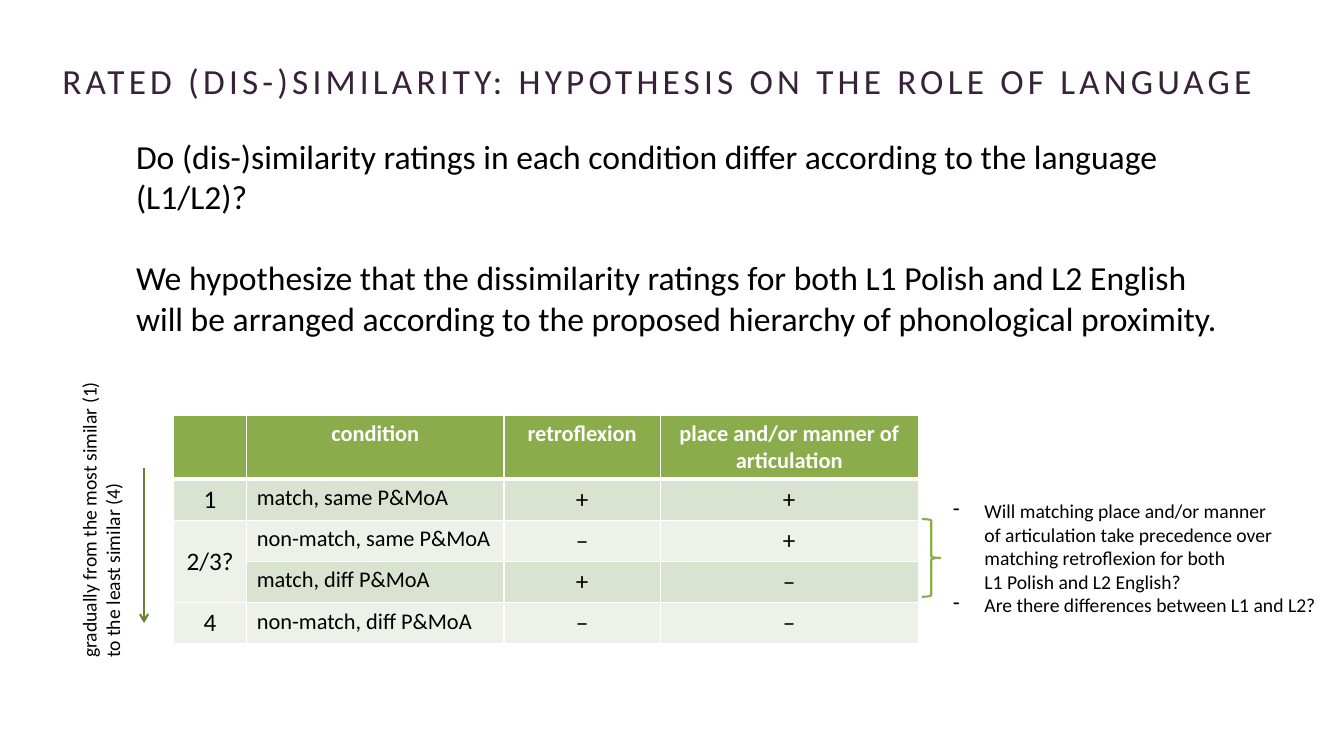
from lxml import etree
from pptx import Presentation
from pptx.dml.color import RGBColor
from pptx.enum import shapes, text
from pptx.oxml import ns
from pptx.util import Cm, Pt

FONT = "Calibri"
GREEN, DARK_GREEN, PURPLE = "8AAC4A", "688138", "39213B"
WHITE, BLACK = "FFFFFF", "000000"
BANDS = ["DAE3D0", "EDF1E9"]
CENTER = text.PP_ALIGN.CENTER

COLUMNS = [1.85, 6.48, 3.94, 6.5]
ROWS = [
    ["", "condition", "retroflexion", "place and/or manner of articulation"],
    ["1", "match, same P&MoA", "+", "+"],
    ["2/3?", "non-match, same P&MoA", "–", "+"],
    ["", "match, diff P&MoA", "+", "–"],
    ["4", "non-match, diff P&MoA", "–", "–"],
]
AIMS = [
    "Do (dis-)similarity ratings in each condition differ according to the language (L1/L2)?",
    "We hypothesize that the dissimilarity ratings for both L1 Polish and L2 English "
    "will be arranged according to the proposed hierarchy of phonological proximity.",
]
SCALE = ["gradually from the most similar (1)", "to the least similar (4)"]
QUESTIONS = [
    ("Will matching place and/or manner", True),
    ("of articulation take precedence over", False),
    ("matching retroflexion for both", False),
    ("L1 Polish and L2 English?", False),
    ("Are there differences between L1 and L2?", True),
]


def rgb(color):
    return RGBColor.from_string(color)


def add_xml(parent, tag, **attrs):
    return etree.SubElement(parent, ns.qn(tag), {k: str(v) for k, v in attrs.items()})


def format_runs(p, size, color=BLACK, bold=False):
    for r in p.runs:
        r.font.name = FONT
        r.font.size = Pt(size)
        r.font.bold = bold
        r.font.color.rgb = rgb(color)


def set_title(s, title, left, top, width, height):
    sp = s.shapes.title
    sp.left, sp.top, sp.width, sp.height = Cm(left), Cm(top), Cm(width), Cm(height)
    tf = sp.text_frame
    tf.text = title
    tf.auto_size = text.MSO_AUTO_SIZE.NONE
    tf.vertical_anchor = text.MSO_ANCHOR.BOTTOM
    tf.margin_right = Cm(0.89)
    p = tf.paragraphs[0]
    p.alignment = CENTER
    p.line_spacing = 0.9
    format_runs(p, 25.2, PURPLE)
    p.runs[0].font._element.set("spc", "300")


def add_text(s, lines, left, top, width, height, size, wrap=False, gap=0):
    sp = s.shapes.add_textbox(Cm(left), Cm(top), Cm(width), Cm(height))
    tf = sp.text_frame
    tf.text = "\n".join(lines)
    tf.word_wrap = wrap
    if not wrap:
        tf.auto_size = text.MSO_AUTO_SIZE.SHAPE_TO_FIT_TEXT
    for i, p in enumerate(tf.paragraphs):
        p.space_before = Pt(gap if i else 0)
        format_runs(p, size)
    return sp


def indent(p, bullet):
    hang = Cm(0.79)
    pPr = p._p.get_or_add_pPr()
    pPr.set("marL", str(hang))
    pPr.set("indent", str(-hang if bullet else 0))
    if bullet:
        add_xml(pPr, "a:buChar", char="-")


def add_arrow(s, x, top, bottom):
    line = s.shapes.add_connector(shapes.MSO_CONNECTOR.STRAIGHT, Cm(x), Cm(top), Cm(x), Cm(bottom))
    line.line.color.rgb = rgb(DARK_GREEN)
    line.line.width = Pt(1.5)
    add_xml(line.line._get_or_add_ln(), "a:tailEnd", type="arrow")
    add_xml(line._element.spPr, "a:effectLst")


def add_brace(s, left, top, width, height):
    sp = s.shapes.add_shape(shapes.MSO_SHAPE.RIGHT_BRACE, Cm(left), Cm(top), Cm(width), Cm(height))
    sp.shadow.inherit = False
    sp.fill.background()
    sp.line.color.rgb = rgb(GREEN)
    sp.line.width = Pt(1.5)


def set_borders(cell, bottom):
    tcPr = cell._tc.get_or_add_tcPr()
    for side, width in (("L", 1), ("R", 1), ("T", 1), ("B", bottom)):
        ln = add_xml(tcPr, f"a:ln{side}", w=Pt(width))
        add_xml(add_xml(ln, "a:solidFill"), "a:srgbClr", val=WHITE)


def format_cell(cell, value, row, col):
    header = row == 0
    set_borders(cell, 3 if header else 1)
    cell.fill.solid()
    cell.fill.fore_color.rgb = rgb(GREEN if header else BANDS[(row - 1) % 2])
    cell.text = value
    p = cell.text_frame.paragraphs[0]
    if header or col != 1:
        p.alignment = CENTER
    format_runs(p, 16 if header or col == 1 else 18, WHITE if header else BLACK, header)


def add_conditions(s, left, top):
    heights = [1.6] + [1.04] * (len(ROWS) - 1)
    frame = s.shapes.add_table(len(ROWS), len(COLUMNS), Cm(left), Cm(top),
                               Cm(sum(COLUMNS)), Cm(sum(heights)))
    table = frame.table
    table.horz_banding = False
    for column, width in zip(table.columns, COLUMNS):
        column.width = Cm(width)
    for i, (row, height) in enumerate(zip(table.rows, heights)):
        row.height = Cm(height)
        for j, cell in enumerate(row.cells):
            format_cell(cell, ROWS[i][j], i, j)
    table.cell(2, 0).merge(table.cell(3, 0))
    table.cell(2, 0).vertical_anchor = text.MSO_ANCHOR.MIDDLE


def main():
    prs = Presentation()
    prs.slide_width, prs.slide_height = Cm(33.87), Cm(19.05)
    s = prs.slides.add_slide(prs.slide_layouts[5])
    set_title(s, "RATED (DIS-)SIMILARITY: HYPOTHESIS ON THE ROLE OF LANGUAGE", 0.91, 1.09, 31.98, 1.6)
    add_text(s, AIMS, 3.18, 3.3, 28.3, 6.25, 24, wrap=True, gap=29)
    add_arrow(s, 3.63, 11.79, 15.7)
    scale = add_text(s, SCALE, -1.27, 12.29, 7.62, 1.45, 14)
    scale.rotation = 270
    add_brace(s, 23.24, 13.08, 0.46, 1.96)
    questions = add_text(s, [line for line, _ in QUESTIONS], 23.77, 12.45, 9.78, 3.25, 14)
    for p, (_, bullet) in zip(questions.text_frame.paragraphs, QUESTIONS):
        indent(p, bullet)
    add_conditions(s, 4.37, 10.46)
    prs.save("out.pptx")


if __name__ == "__main__":
    main()
